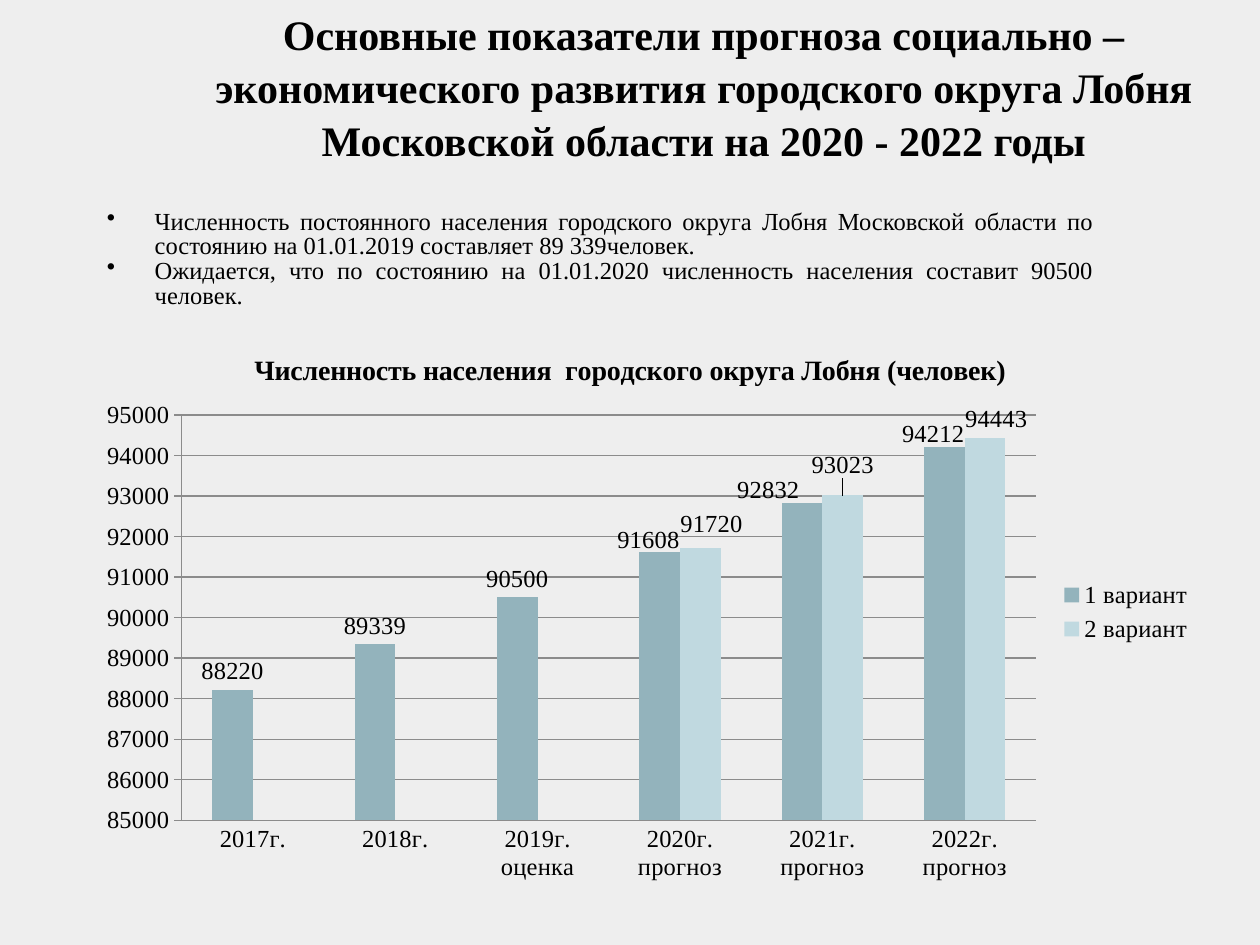
import pptx
import pptx.chart.data
import pptx.dml.color
import pptx.enum.chart
import pptx.enum.text
import pptx.oxml
import pptx.oxml.ns
import pptx.util
from pptx.util import Inches

BACKGROUND = pptx.dml.color.RGBColor(0xEE, 0xEE, 0xEE)
BLACK = pptx.dml.color.RGBColor(0, 0, 0)
GRID_GREY = pptx.dml.color.RGBColor(0x8B, 0x8B, 0x8B)
FIRST_VARIANT = pptx.dml.color.RGBColor(0x93, 0xB3, 0xBC)
SECOND_VARIANT = pptx.dml.color.RGBColor(0xC0, 0xD9, 0xE0)

TITLE = ("Основные показатели прогноза социально –экономического развития "
         "городского округа Лобня Московской области на 2020 - 2022 годы")
FACTS = [
    "Численность постоянного населения городского округа Лобня Московской "
    "области по состоянию на 01.01.2019 составляет 89 339человек.",
    "Ожидается, что по состоянию на 01.01.2020 численность населения "
    "составит 90500 человек.",
]
CHART_TITLE = "Численность населения  городского округа Лобня (человек)"
YEARS = ["2017г.", "2018г.", "2019г. оценка",
         "2020г. прогноз", "2021г. прогноз", "2022г. прогноз"]
# Name, values, colour, and label shifts by year index as fractions of the chart
VARIANTS = [
    ("1 вариант", [88220, 89339, 90500, 91608, 92832, 94212], FIRST_VARIANT,
     {3: (-0.01, 0.01), 4: (-0.03, 0.01), 5: (-0.01, 0.01)}),
    ("2 вариант", [None, None, None, 91720, 93023, 94443], SECOND_VARIANT,
     {3: (0.01, -0.01), 4: (0, -0.02), 5: (0.01, 0)}),
]


def apply(target, values):
    for name, value in values.items():
        setattr(target, name, value)


def style_font(font, size, bold=False):
    apply(font, {"name": "Times New Roman", "size": pptx.util.Pt(size), "bold": bold})
    font.color.rgb = BLACK


def add_text(page, area, paragraphs, size, para_format, bold=False,
             anchor=pptx.enum.text.MSO_ANCHOR.TOP, bulleted=False):
    frame = page.shapes.add_textbox(*map(Inches, area)).text_frame
    apply(frame, {"word_wrap": True, "vertical_anchor": anchor})
    for index, text in enumerate(paragraphs):
        para = frame.add_paragraph() if index else frame.paragraphs[0]
        apply(para, para_format)
        if bulleted:
            add_bullet(para)
        span = para.add_run()
        span.text = text
        style_font(span.font, size, bold)


def add_bullet(para):
    """Give the paragraph a round bullet on a hanging indent."""
    properties = para._p.get_or_add_pPr()
    properties.set("marL", str(Inches(0.38)))
    properties.set("indent", str(-Inches(0.38)))
    properties.append(pptx.oxml.parse_xml(
        f'<a:buChar {pptx.oxml.ns.nsdecls("a")} char="•"/>'))


def manual_layout(inner=False, edge=True, **fractions):
    """Build a c:layout element from x, y, w and h fractions of the chart."""
    parts = ['<c:layoutTarget val="inner"/>'] if inner else []
    if edge:
        parts += ['<c:xMode val="edge"/>', '<c:yMode val="edge"/>']
    parts += [f'<c:{name} val="{value}"/>' for name, value in fractions.items()]
    return pptx.oxml.parse_xml(
        f'<c:layout {pptx.oxml.ns.nsdecls("c")}><c:manualLayout>'
        f'{"".join(parts)}</c:manualLayout></c:layout>')


def place(element, layout, after):
    """Put the layout after the named child, or first if there is none."""
    for old in element.findall(pptx.oxml.ns.qn("c:layout")):
        element.remove(old)
    previous = element.find(pptx.oxml.ns.qn(after)) if after else None
    if previous is None:
        element.insert(0, layout)
    else:
        previous.addnext(layout)


def style_series(series, colour, shifts):
    series.format.fill.solid()
    series.format.fill.fore_color.rgb = colour
    position = pptx.enum.chart.XL_LABEL_POSITION.OUTSIDE_END
    labels = series.data_labels
    apply(labels, {"show_value": True, "position": position})
    style_font(labels.font, 14)
    for index, (x, y) in shifts.items():
        label = series.points[index].data_label
        style_font(label.font, 14)
        label.position = position
        entry = next(item for item in labels._element.findall(pptx.oxml.ns.qn("c:dLbl"))
                     if item.find(pptx.oxml.ns.qn("c:idx")).get("val") == str(index))
        place(entry, manual_layout(edge=False, x=x, y=y), "c:idx")


def style_axes(chart):
    marks = pptx.enum.chart.XL_TICK_MARK
    values, years = chart.value_axis, chart.category_axis
    apply(values, {"minimum_scale": 85000, "maximum_scale": 95000, "major_unit": 1000,
                   "major_tick_mark": marks.OUTSIDE, "has_major_gridlines": True})
    apply(years, {"major_tick_mark": marks.NONE})
    for line in (values.format.line, years.format.line,
                 values.major_gridlines.format.line):
        line.color.rgb = GRID_GREY
        line.width = pptx.util.Pt(0.75)
    for axis in (values, years):
        style_font(axis.tick_labels.font, 14)
    apply(values.tick_labels, {"number_format": "General",
                               "number_format_is_linked": False})


def add_population_chart(page):
    data = pptx.chart.data.CategoryChartData()
    data.categories = YEARS
    for name, values, _, _ in VARIANTS:
        data.add_series(name, values)
    chart = page.shapes.add_chart(
        pptx.enum.chart.XL_CHART_TYPE.COLUMN_CLUSTERED,
        *map(Inches, (0.64, 2.57, 8.92, 4.53)), data).chart
    style_font(chart.font, 14)

    chart.has_title = True
    span = chart.chart_title.text_frame.paragraphs[0].add_run()
    span.text = CHART_TITLE
    style_font(span.font, 16, bold=True)
    place(chart.chart_title._element, manual_layout(x=0.15, y=0.04), "c:tx")

    chart.has_legend = True
    apply(chart.legend, {"position": pptx.enum.chart.XL_LEGEND_POSITION.RIGHT,
                         "include_in_layout": False})
    style_font(chart.legend.font, 14)
    place(chart.legend._element,
          manual_layout(x=0.87, y=0.44, w=0.12, h=0.13), "c:legendPos")

    plot = chart.plots[0]
    apply(plot, {"gap_width": 150, "overlap": 0, "vary_by_categories": False})
    for series, (_, _, colour, shifts) in zip(plot.series, VARIANTS):
        style_series(series, colour, shifts)
    style_axes(chart)
    place(chart._chartSpace.chart.plotArea,
          manual_layout(inner=True, x=0.09, y=0.16, w=0.76, h=0.71), None)


def main():
    deck = pptx.Presentation()
    apply(deck, {"slide_width": Inches(10), "slide_height": Inches(7.5)})
    page = deck.slides.add_slide(deck.slide_layouts[6])
    page.background.fill.solid()
    page.background.fill.fore_color.rgb = BACKGROUND

    alignments = pptx.enum.text.PP_ALIGN
    add_text(page, (1.3, 0.13, 8.57, 1.23), [TITLE], 24,
             {"alignment": alignments.CENTER, "line_spacing": 1.05},
             bold=True, anchor=pptx.enum.text.MSO_ANCHOR.BOTTOM)
    add_text(page, (0.75, 1.62, 8.03, 1), FACTS, 14,
             {"alignment": alignments.JUSTIFY, "line_spacing": 0.84}, bulleted=True)
    add_population_chart(page)
    deck.save("out.pptx")


if __name__ == "__main__":
    main()
